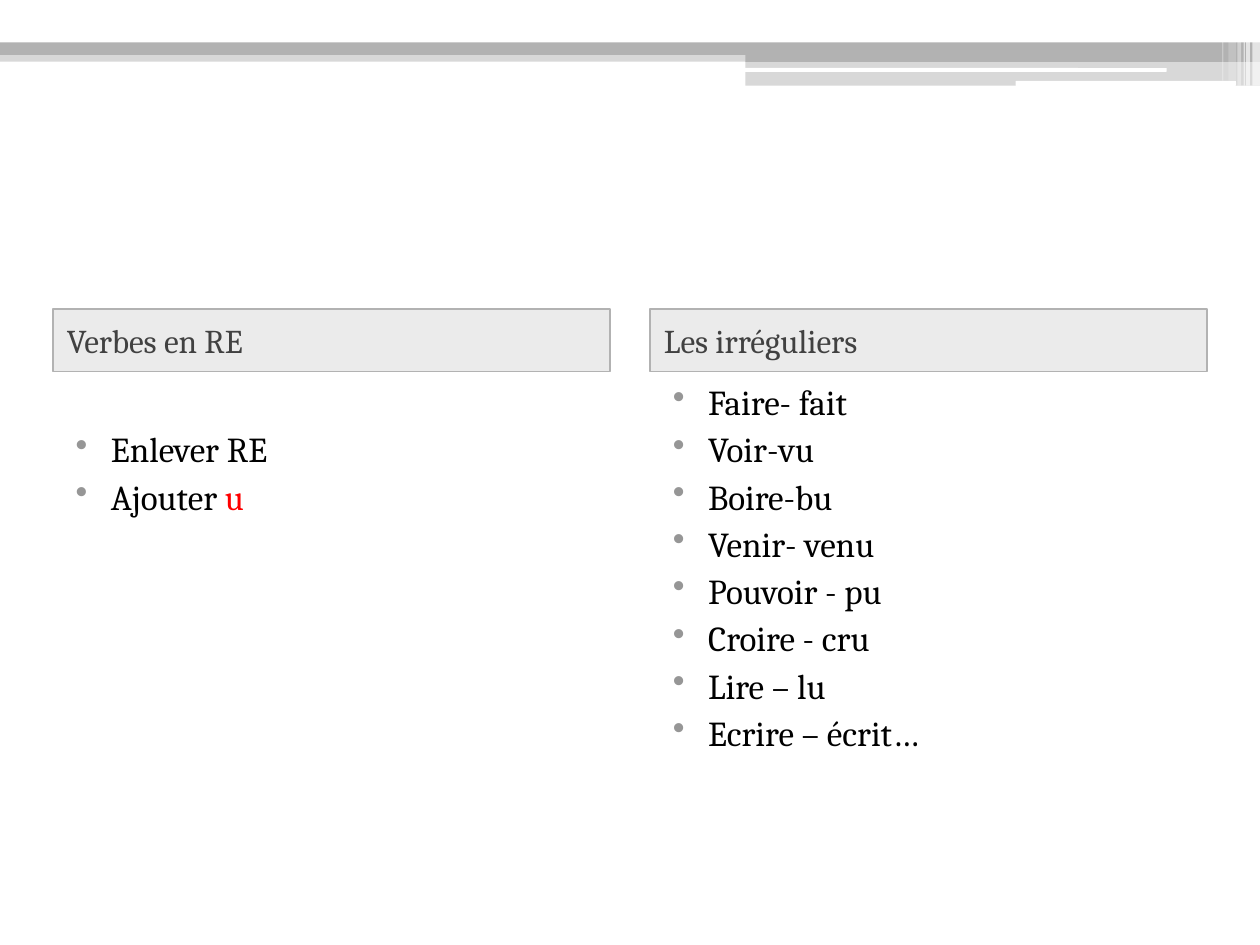
from typing import NamedTuple

from lxml import etree
from pptx import Presentation
from pptx.dml.color import RGBColor
from pptx.enum.shapes import MSO_SHAPE
from pptx.enum.text import MSO_ANCHOR, PP_ALIGN
from pptx.oxml.ns import qn
from pptx.util import Pt

RECTANGLE = MSO_SHAPE.RECTANGLE
ROUNDED = MSO_SHAPE.ROUNDED_RECTANGLE
MIDDLE, TOP = MSO_ANCHOR.MIDDLE, MSO_ANCHOR.TOP
LEFT = PP_ALIGN.LEFT

GRAY, WHITE, BLACK, RED = "B2B2B2", "FFFFFF", "000000", "FF0000"
HEADING_COLOR, BULLET_COLOR = "414141", "969696"
FONT = "Cambria"
INSET = 4.32
COLUMN_WIDTH = 318.24
HEADING_TOP, HEADING_HEIGHT = 176.4, 36
LIST_TOP, LIST_BOTTOM = 213.12, 519.12
LINE_PITCH = 27


class Bar(NamedTuple):
    left: float
    top: float
    width: float
    height: float
    color: str
    opacity: int = 100
    preset: MSO_SHAPE = RECTANGLE


class TextPart(NamedTuple):
    text: str
    color: str = BLACK


class Column(NamedTuple):
    left: float
    heading: str
    items: list[list[TextPart]]
    skipped_lines: int = 0


# Header band, from back to front
BARS = [
    Bar(0, 28.8, 720, 6.48, GRAY, 50),
    Bar(0, 24.2, 720, 7.2, GRAY),
    Bar(425.9, 28.2, 294.1, 7.2, GRAY),
    Bar(425.9, 35.2, 294.1, 13.7, GRAY, 50),
    Bar(425.5, 38.88, 241.2, 2.16, WHITE, preset=ROUNDED),
    Bar(580.32, 46.2, 126, 2.88, WHITE, preset=ROUNDED),
    Bar(715.68, 0, 4.32, 48.96, WHITE, 65),
    Bar(712.08, 0, 2.16, 48.96, WHITE, 65),
    Bar(710.64, 0, 0.72, 48.96, WHITE, 60),
    Bar(707.04, 0, 2.16, 48.96, WHITE, 40),
    Bar(702, 0, 4.32, 46.08, WHITE, 20),
    Bar(698.4, 0, 0.72, 46.08, WHITE, 30),
]

IRREGULAR_VERBS = [
    "Faire- fait", "Voir-vu", "Boire-bu", "Venir- venu",
    "Pouvoir - pu", "Croire - cru", "Lire – lu", "Ecrire – écrit…",
]
COLUMNS = [
    Column(30.24, "Verbes en RE",
           [[TextPart("Enlever RE")], [TextPart("Ajouter "), TextPart("u", RED)]],
           skipped_lines=1),
    Column(371.52, "Les irréguliers", [[TextPart(verb)] for verb in IRREGULAR_VERBS]),
]


def rgb(color: str) -> RGBColor:
    return RGBColor.from_string(color)


def apply_format(target, values: dict) -> None:
    for name, value in values.items():
        setattr(target, name, value)


def draw_bar(slide, bar: Bar):
    shape = slide.shapes.add_shape(
        bar.preset, Pt(bar.left), Pt(bar.top), Pt(bar.width), Pt(bar.height))
    shape.shadow.inherit = False
    shape.fill.solid()
    shape.fill.fore_color.rgb = rgb(bar.color)
    if bar.opacity < 100:
        color_element = shape.fill._xPr.find(".//" + qn("a:srgbClr"))
        etree.SubElement(color_element, qn("a:alpha"), val=str(bar.opacity * 1000))
    shape.line.fill.background()
    return shape


def format_frame(frame, anchor: MSO_ANCHOR) -> None:
    margins = {f"margin_{side}": Pt(INSET) for side in ("left", "top", "right", "bottom")}
    apply_format(frame, {"word_wrap": True, "vertical_anchor": anchor, **margins})


def format_paragraph(paragraph, margin: float, indent: float) -> None:
    apply_format(paragraph, {"alignment": LEFT, "space_before": Pt(3)})
    properties = paragraph._p.get_or_add_pPr()
    properties.set("marL", str(Pt(margin)))
    properties.set("indent", str(Pt(indent)))


def add_bullet(paragraph) -> None:
    properties = paragraph._p.get_or_add_pPr()
    bullet_color = etree.SubElement(properties, qn("a:buClr"))
    etree.SubElement(bullet_color, qn("a:srgbClr"), val=BULLET_COLOR)
    etree.SubElement(properties, qn("a:buChar"), char="•")


def add_text(paragraph, part: TextPart, size: float) -> None:
    run = paragraph.add_run()
    run.text = part.text
    apply_format(run.font, {"name": FONT, "size": Pt(size)})
    run.font.color.rgb = rgb(part.color)


def draw_column(slide, column: Column) -> None:
    # Heading panel
    panel = draw_bar(slide, Bar(column.left, HEADING_TOP, COLUMN_WIDTH,
                                HEADING_HEIGHT, GRAY, 25))
    panel.line.color.rgb = rgb(GRAY)
    panel.line.width = Pt(1)
    format_frame(panel.text_frame, MIDDLE)
    heading = panel.text_frame.paragraphs[0]
    format_paragraph(heading, 0, 3.6)
    add_text(heading, TextPart(column.heading, HEADING_COLOR), 19)

    # Bulleted list
    top = LIST_TOP + column.skipped_lines * LINE_PITCH
    frame = slide.shapes.add_textbox(
        Pt(column.left), Pt(top), Pt(COLUMN_WIDTH), Pt(LIST_BOTTOM - top)).text_frame
    format_frame(frame, TOP)
    for index, parts in enumerate(column.items):
        paragraph = frame.add_paragraph() if index else frame.paragraphs[0]
        format_paragraph(paragraph, 28.8, -20.16)
        add_bullet(paragraph)
        for part in parts:
            add_text(paragraph, part, 20)


def main() -> None:
    presentation = Presentation()
    apply_format(presentation, {"slide_width": Pt(720), "slide_height": Pt(540)})
    # The slide has no title, so it takes the blank layout
    slide = presentation.slides.add_slide(presentation.slide_layouts[6])
    for bar in BARS:
        draw_bar(slide, bar)
    for column in COLUMNS:
        draw_column(slide, column)
    presentation.save("out.pptx")


if __name__ == "__main__":
    main()
